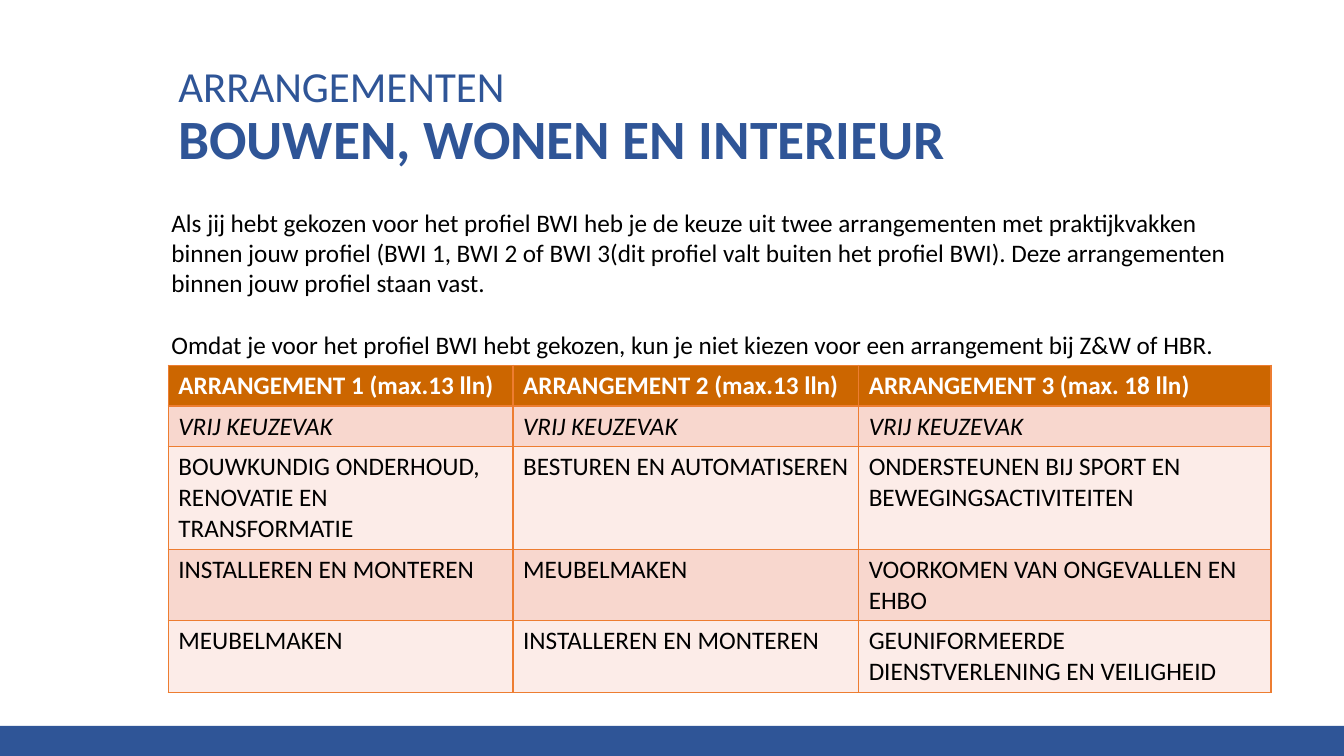
from lxml.etree import SubElement
from pptx import Presentation
from pptx.dml.color import RGBColor
from pptx.enum.shapes import MSO_SHAPE
from pptx.enum.text import MSO_ANCHOR, MSO_AUTO_SIZE as AUTO, PP_ALIGN
from pptx.oxml.ns import qn
from pptx.util import Cm, Pt

COLORS = {"blue": "2F5597", "black": "000000", "white": "FFFFFF", "edge": "ED7D31",
          "head": "CC6600", "dark": "F8D7CE", "light": "FCECE8"}
TITLE = [("ARRANGEMENTEN", {"size": Pt(30.6), "bold": False}),
         ("BOUWEN, WONEN EN INTERIEUR", {"size": Pt(39.6), "bold": True})]
INTRO = [
    "Als jij hebt gekozen voor het profiel BWI heb je de keuze uit twee arrangementen "
    "met praktijkvakken binnen jouw profiel (BWI 1, BWI 2 of BWI 3(dit profiel valt "
    "buiten het profiel BWI). Deze arrangementen binnen jouw profiel staan vast.",
    "Omdat je voor het profiel BWI hebt gekozen, kun je niet kiezen voor een "
    "arrangement bij Z&W of HBR.",
]
ROWS = [
    ["ARRANGEMENT 1 (max.13 lln)", "ARRANGEMENT 2 (max.13 lln)", "ARRANGEMENT 3 (max. 18 lln)"],
    ["VRIJ KEUZEVAK"] * 3,
    ["BOUWKUNDIG ONDERHOUD, RENOVATIE EN TRANSFORMATIE", "BESTUREN EN AUTOMATISEREN",
     "ONDERSTEUNEN BIJ SPORT EN BEWEGINGSACTIVITEITEN"],
    ["INSTALLEREN EN MONTEREN", "MEUBELMAKEN", "VOORKOMEN VAN ONGEVALLEN EN EHBO"],
    ["MEUBELMAKEN", "INSTALLEREN EN MONTEREN", "GEUNIFORMEERDE DIENSTVERLENING EN VEILIGHEID"],
]


class Deck:
    """Holds the style and the current slide, and adds each kind of element."""

    def __init__(self, prs, font="Calibri", size=Pt(18)):
        self.s = prs.slides.add_slide(prs.slide_layouts[5])
        self.font, self.size = font, size

    def rgb(self, name):
        return RGBColor.from_string(COLORS[name])

    def apply(self, obj, **fmt):
        for key, value in fmt.items():
            setattr(obj, key, value)

    def run(self, p, text, color="black", **fmt):
        r = p.add_run()
        r.text = text
        self.apply(r.font, **{"name": self.font, "size": self.size, **fmt})
        r.font.color.rgb = self.rgb(color)

    def band(self, x, y, w, h, color):
        sp = self.s.shapes.add_shape(MSO_SHAPE.RECTANGLE, Cm(x), Cm(y), Cm(w), Cm(h))
        sp.shadow.inherit = False
        sp.fill.solid()
        sp.fill.fore_color.rgb = self.rgb(color)
        sp.line.fill.background()

    def title(self, x, y, w, h, lines, color):
        sp = self.s.shapes.title
        self.apply(sp, left=Cm(x), top=Cm(y), width=Cm(w), height=Cm(h))
        tf = sp.text_frame
        self.apply(tf, vertical_anchor=MSO_ANCHOR.BOTTOM, word_wrap=True, auto_size=AUTO.NONE)
        p = tf.paragraphs[0]
        self.apply(p, alignment=PP_ALIGN.LEFT, line_spacing=0.9)
        for i, (text, fmt) in enumerate(lines):
            if i:
                p.add_line_break()
            self.run(p, text, color, **fmt)

    def text(self, x, y, w, h, paragraphs, gap):
        tf = self.s.shapes.add_textbox(Cm(x), Cm(y), Cm(w), Cm(h)).text_frame
        self.apply(tf, word_wrap=True, auto_size=AUTO.SHAPE_TO_FIT_TEXT, margin_left=Cm(0.38))
        for i, text in enumerate(paragraphs):
            p = tf.add_paragraph() if i else tf.paragraphs[0]
            p.space_before = Pt(gap if i else 0)
            self.run(p, text)

    def borders(self, cell, color):
        tc_pr = cell._tc.get_or_add_tcPr()
        for side in ("lnL", "lnR", "lnT", "lnB"):
            ln = SubElement(tc_pr, qn(f"a:{side}"), w=str(Pt(1)))
            SubElement(SubElement(ln, qn("a:solidFill")), qn("a:srgbClr"), val=COLORS[color])

    def table(self, x, y, widths, row_h, rows):
        frame = self.s.shapes.add_table(len(rows), len(widths), Cm(x), Cm(y),
                                        Cm(sum(widths)), Cm(row_h * len(rows)))
        tbl = frame.table
        for col, w in zip(tbl.columns, widths):
            col.width = Cm(w)
        for i, row in enumerate(rows):
            tbl.rows[i].height = Cm(row_h)
            fill = "head" if i == 0 else "dark" if i % 2 else "light"
            for j, text in enumerate(row):
                cell = tbl.cell(i, j)
                self.borders(cell, "edge")
                cell.fill.solid()
                cell.fill.fore_color.rgb = self.rgb(fill)
                self.run(cell.text_frame.paragraphs[0], text,
                         "black" if i else "white", bold=i == 0, italic=i == 1)


def main():
    prs = Presentation()
    prs.slide_width, prs.slide_height = Cm(33.87), Cm(19.05)
    deck = Deck(prs)
    deck.band(0, 18.29, 33.87, 0.76, "blue")
    deck.title(4.24, 1.27, 25.4, 3.17, TITLE, "blue")
    deck.table(4.24, 9.2, [8.69, 8.71, 10.39], 1.03, ROWS)
    deck.text(3.94, 5.1, 27.43, 4.88, INTRO, gap=22)
    prs.save("out.pptx")


if __name__ == "__main__":
    main()
